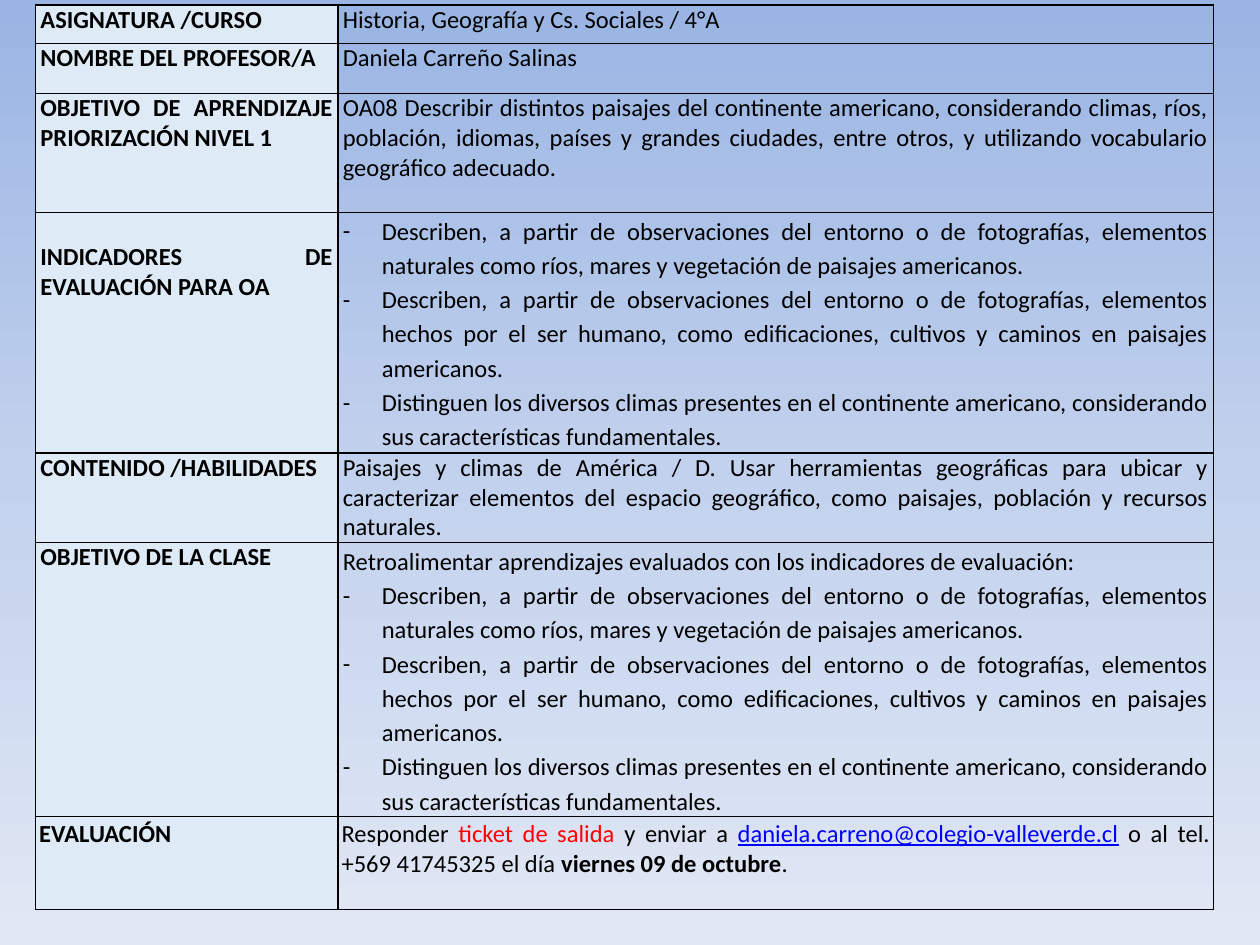
"""Build a lesson plan slide: one two-column table on a blue gradient."""
from copy import deepcopy

from lxml import etree
from pptx import Presentation
from pptx.dml.color import RGBColor
from pptx.enum.text import PP_ALIGN
from pptx.oxml.ns import qn
from pptx.util import Pt

JUSTIFY, LEFT = PP_ALIGN.JUSTIFY, PP_ALIGN.LEFT
THEME = {
    "font": "Calibri", "size": Pt(14),
    "ink": "000000", "red": "FF0000", "mail": "0000FF", "label": "DEEAF6",
    "sky": ["9AB5E4", "C2D1ED", "E1E8F5"],
}


def color(name):
    return RGBColor.from_string(THEME[name])


def add_text(para, runs, bold=False, align=JUSTIFY):
    para.alignment = align
    para.font.name, para.font.size = THEME["font"], THEME["size"]
    para.font.color.rgb = color("ink")
    para.font.bold = bold
    for text, style in runs:
        run = para.add_run()
        run.text = text
        if style in ("red", "mail"):
            run.font.color.rgb = color(style)
        if style == "mail":
            run.font.underline = True
        if style == "bold":
            run.font.bold = True


GOALS = [
    "Describen, a partir de observaciones del entorno o de fotografías, elementos "
    "naturales como ríos, mares y vegetación de paisajes americanos.",
    "Describen, a partir de observaciones del entorno o de fotografías, elementos "
    "hechos por el ser humano, como edificaciones, cultivos y caminos en paisajes americanos.",
    "Distinguen los diversos climas presentes en el continente americano, "
    "considerando sus características fundamentales.",
]
TASK = [
    ("Responder ", ""), ("ticket de salida ", "red"), ("y enviar a ", ""),
    ("daniela.carreno@colegio-valleverde.cl", "mail"),
    (" o al tel. +569 41745325 el día ", ""), ("viernes 09 de octubre", "bold"), (".", ""),
]
ROWS = [
    (22, "ASIGNATURA /CURSO", [("Historia, Geografía y Cs. Sociales / 4°A", "")], []),
    (28.5, "NOMBRE DEL PROFESOR/A", [("Daniela Carreño Salinas", "")], []),
    (68, "OBJETIVO DE APRENDIZAJE PRIORIZACIÓN NIVEL 1", [(
        "OA08 Describir distintos paisajes del continente americano, considerando climas, "
        "ríos, población, idiomas, países y grandes ciudades, entre otros, y utilizando "
        "vocabulario geográfico adecuado.", "")], []),
    (137.5, "INDICADORES DE EVALUACIÓN PARA OA", [], GOALS),
    (51, "CONTENIDO /HABILIDADES", [(
        "Paisajes y climas de América / D. Usar herramientas geográficas para ubicar y "
        "caracterizar elementos del espacio geográfico, como paisajes, población y "
        "recursos naturales.", "")], []),
    (156.5, "OBJETIVO DE LA CLASE", [(
        "Retroalimentar aprendizajes evaluados con los indicadores de evaluación:", "")], GOALS),
    (53, "EVALUACIÓN", TASK, []),
]
COLS = [172.8, 500.4]

deck = Presentation()
deck.slide_width, deck.slide_height = Pt(720), Pt(540)
slide = deck.slides.add_slide(deck.slide_layouts[6])

sky = slide.background.fill
sky.gradient()
sky.gradient_angle = 270
stops = slide.element.find(".//" + qn("a:gsLst"))
stops.insert(1, deepcopy(stops[0]))
for i, (stop, tone) in enumerate(zip(sky.gradient_stops, THEME["sky"])):
    stop.position = i / 2
    stop.color.rgb = RGBColor.from_string(tone)

frame = slide.shapes.add_table(
    len(ROWS), 2, Pt(20.2), Pt(2.9), Pt(sum(COLS)), Pt(sum(row[0] for row in ROWS)))
table = frame.table
table.first_row = table.horz_banding = False
for col, width in zip(table.columns, COLS):
    col.width = Pt(width)

for row, (height, label, intro, goals) in zip(table.rows, ROWS):
    row.height = Pt(height)
    last = label == "EVALUACIÓN"
    for cell in row.cells:
        cell.margin_left = cell.margin_right = Pt(2.2 if last else 2.9)
        cell.margin_top = cell.margin_bottom = Pt(1.4 if last else 0)
        props = cell._tc.get_or_add_tcPr()
        for side in ("a:lnL", "a:lnR", "a:lnT", "a:lnB"):
            edge = etree.SubElement(props, qn(side), w=str(Pt(1)))
            paint = etree.SubElement(edge, qn("a:solidFill"))
            etree.SubElement(paint, qn("a:srgbClr"), val=THEME["ink"])

    head, body = row.cells
    head.fill.solid()
    head.fill.fore_color.rgb = color("label")
    body.fill.background()
    if label.startswith("INDICADORES"):
        head.margin_top = Pt(17)
    add_text(head.text_frame.paragraphs[0], [(label, "")], bold=True)

    para = body.text_frame.paragraphs[0]
    if intro:
        add_text(para, intro, align=LEFT if goals else JUSTIFY)
        if goals:
            para.line_spacing = 1.15
    for i, goal in enumerate(goals):
        if intro or i:
            para = body.text_frame.add_paragraph()
        para.line_spacing = 1.15
        props = para._p.get_or_add_pPr()
        props.set("marL", str(Pt(22.3)))
        props.set("indent", str(-Pt(22.3)))
        etree.SubElement(props, qn("a:buFont"), typeface=THEME["font"])
        etree.SubElement(props, qn("a:buChar"), char="-")
        add_text(para, [(goal, "")])

deck.save("out.pptx")
